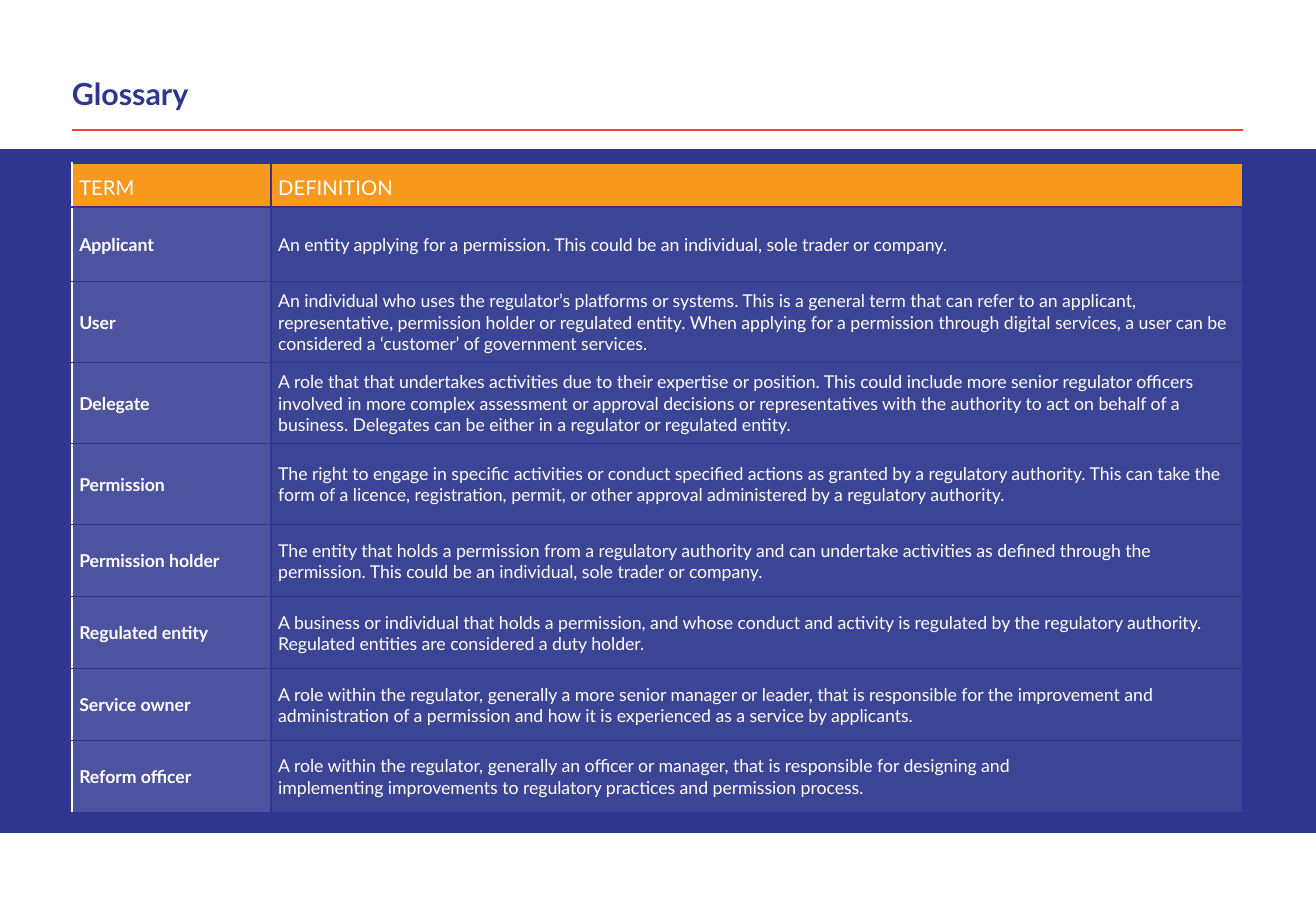
from lxml import etree
from pptx import Presentation
from pptx import util as u
from pptx.dml.color import RGBColor
from pptx.enum import shapes, text
from pptx.oxml import ns

PX = 7526  # EMU per px
WIDTH, HEIGHT = 1316, 911
LEFT, CONTENT_W = 72, 1171
FONT = "Lato"
NAVY, ORANGE, RED, WHITE = "2E368F", "F8981D", "FF3A40", "FFFFFF"
COL_WIDTHS = [199, 972]
ROW_HEIGHTS = [44, 75] + [81] * 3 + [72] * 4
TERM_ALPHA, DEFINITION_ALPHA = 15, 7

GLOSSARY = [
    ("Applicant", "An entity applying for a permission. This could be an individual, "
     "sole trader or company."),
    ("User", "An individual who uses the regulator’s platforms or systems. This is a "
     "general term that can refer to an applicant, representative, permission holder or "
     "regulated entity. When applying for a permission through digital services, a user "
     "can be considered a ‘customer’ of government services."),
    ("Delegate", "A role that that undertakes activities due to their expertise or "
     "position. This could include more senior regulator officers involved in more complex "
     "assessment or approval decisions or representatives with the authority to act on "
     "behalf of a business. Delegates can be either in a regulator or regulated entity."),
    ("Permission", "The right to engage in specific activities or conduct specified actions "
     "as granted by a regulatory authority. This can take the form of a licence, "
     "registration, permit, or other approval administered by a regulatory authority."),
    ("Permission holder", "The entity that holds a permission from a regulatory authority "
     "and can undertake activities as defined through the permission. This could be an "
     "individual, sole trader or company."),
    ("Regulated entity", "A business or individual that holds a permission, and whose "
     "conduct and activity is regulated by the regulatory authority. Regulated entities "
     "are considered a duty holder."),
    ("Service owner", "A role within the regulator, generally a more senior manager or "
     "leader, that is responsible for the improvement and administration of a permission "
     "and how it is experienced as a service by applicants."),
    ("Reform officer", "A role within the regulator, generally an officer or manager, that "
     "is responsible for designing and \nimplementing improvements to regulatory practices "
     "and permission process."),
]


def px(*lengths):
    return [u.Emu(n * PX) for n in lengths]


def rgb(color):
    return RGBColor.from_string(color)


def add_text(p, content, size, color, bold=False):
    """Add runs to a paragraph, with a line break at each newline."""
    for i, line in enumerate(content.split("\n")):
        if i:
            p.add_line_break()
        r = p.add_run()
        r.text = line
        r.font.name, r.font.size, r.font.bold = FONT, u.Pt(size), bold
        r.font.color.rgb = rgb(color)


def add_band(s, top, height):
    sp = s.shapes.add_shape(shapes.MSO_SHAPE.RECTANGLE, *px(0, top, WIDTH, height))
    sp.shadow.inherit = False
    sp.fill.solid()
    sp.fill.fore_color.rgb = rgb(NAVY)
    sp.line.fill.background()


def add_rule(s, y):
    line = s.shapes.add_connector(shapes.MSO_CONNECTOR.STRAIGHT,
                                  *px(LEFT, y, LEFT + CONTENT_W, y))
    line.line.color.rgb = rgb(RED)
    line.line.width = u.Pt(1.25)
    etree.SubElement(line._element.spPr, ns.qn("a:effectLst"))


def add_title(s, title):
    tf = s.shapes.add_textbox(*px(LEFT, 73, CONTENT_W, 45)).text_frame
    tf.word_wrap = True
    tf.margin_left = tf.margin_right = 0
    tf.vertical_anchor = text.MSO_ANCHOR.BOTTOM
    p = tf.paragraphs[0]
    p.line_spacing = 0.9
    add_text(p, title, 18, NAVY, bold=True)


def fill_cell(cell, color, alpha=None):
    """Fill a cell, with alpha as percent opacity."""
    cell.fill.solid()
    cell.fill.fore_color.rgb = rgb(color)
    if alpha is not None:
        clr = cell._tc.tcPr.find(".//" + ns.qn("a:srgbClr"))
        etree.SubElement(clr, ns.qn("a:alpha"), val=str(alpha * 1000))


def set_borders(cell, sides):
    """Draw navy borders on the sides, given in the order L, R, T, B."""
    for i, side in enumerate(sides):
        ln = etree.Element(ns.qn("a:ln" + side), w=str(u.Pt(0.75)))
        fill = etree.SubElement(ln, ns.qn("a:solidFill"))
        etree.SubElement(fill, ns.qn("a:srgbClr"), val=NAVY)
        cell._tc.tcPr.insert(i, ln)


def add_glossary(s, top):
    rows = [("TERM", "DEFINITION")] + GLOSSARY
    table = s.shapes.add_table(len(rows), len(COL_WIDTHS),
                               *px(LEFT, top, CONTENT_W, sum(ROW_HEIGHTS))).table
    table.first_row = table.horz_banding = False
    for col, width in zip(table.columns, px(*COL_WIDTHS)):
        col.width = width
    for row, height in zip(table.rows, px(*ROW_HEIGHTS)):
        row.height = height
    for i, contents in enumerate(rows):
        for j, content in enumerate(contents):
            cell, header, term = table.cell(i, j), i == 0, j == 0
            cell.margin_left = cell.margin_right = u.Inches(0.06)
            cell.margin_top = cell.margin_bottom = u.Inches(0.06)
            cell.vertical_anchor = text.MSO_ANCHOR.BOTTOM if header else text.MSO_ANCHOR.MIDDLE
            add_text(cell.text_frame.paragraphs[0], content,
                     12 if header else 10.5, WHITE, bold=term and not header)
            if header:
                fill_cell(cell, ORANGE)
            else:
                fill_cell(cell, WHITE, TERM_ALPHA if term else DEFINITION_ALPHA)
            set_borders(cell, "RTB" if term else "LRTB")


def main():
    prs = Presentation()
    prs.slide_width, prs.slide_height = px(WIDTH, HEIGHT)
    s = prs.slides.add_slide(prs.slide_layouts[6])
    add_band(s, 149, 684)
    add_rule(s, 130)
    add_glossary(s, 163)
    add_title(s, "Glossary")
    prs.save("out.pptx")


if __name__ == "__main__":
    main()
